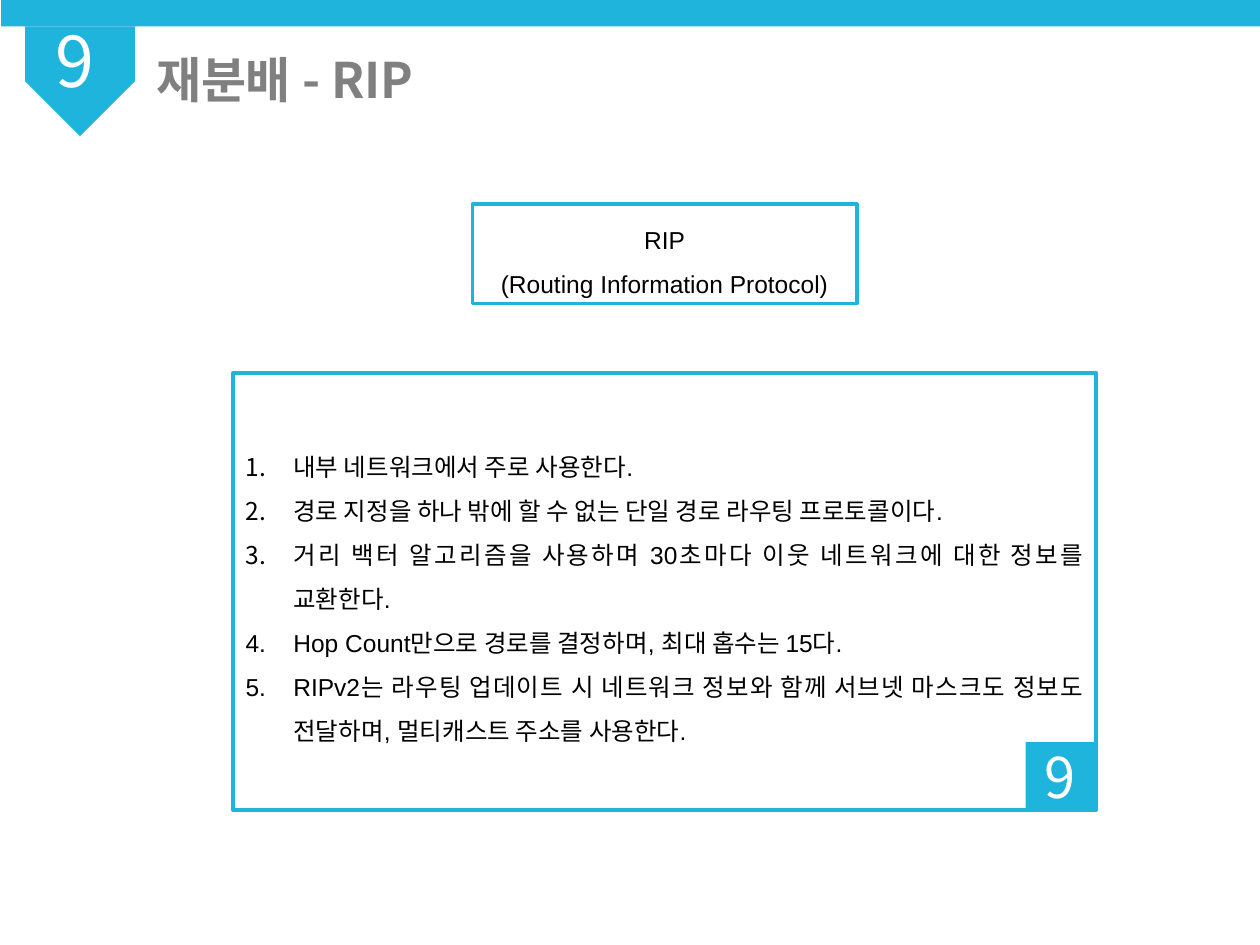
from lxml import etree
from pptx import Presentation
from pptx.dml.color import RGBColor
from pptx.enum.shapes import MSO_SHAPE
from pptx.enum.text import MSO_ANCHOR, PP_ALIGN
from pptx.oxml.ns import qn
from pptx.util import Inches, Pt

RECT = MSO_SHAPE.RECTANGLE
SNIP = MSO_SHAPE.SNIP_2_SAME_RECTANGLE
TOP, MIDDLE = MSO_ANCHOR.TOP, MSO_ANCHOR.MIDDLE
LEFT, CENTER, JUSTIFY = PP_ALIGN.LEFT, PP_ALIGN.CENTER, PP_ALIGN.JUSTIFY

THEME = {
    "blue": RGBColor.from_string("1EB4DC"),
    "gray": RGBColor.from_string("808080"),
    "black": RGBColor.from_string("000000"),
    "white": RGBColor.from_string("FFFFFF"),
    "latin": "Arial",
    "hangul": "Noto Sans CJK KR",
    "body": Pt(14),
    "title": Pt(28),
    "page": Pt(32),
    "badge": Pt(40),
}

deck = Presentation()
deck.slide_width, deck.slide_height = Inches(10), Inches(7.5)
slide = deck.slides.add_slide(deck.slide_layouts[6])


def add_box(kind, area, solid):
    box = slide.shapes.add_shape(kind, *map(Inches, area))
    box.shadow.inherit = False
    if solid:
        box.fill.solid()
        box.fill.fore_color.rgb = THEME["blue"]
        box.line.fill.background()
    else:
        box.fill.background()
        box.line.color.rgb = THEME["blue"]
        box.line.width = Pt(2)
    return box


def write(box, lines, size, color, font, align, anchor=MIDDLE,
          space=None, bold=False, number=False):
    frame = box.text_frame
    frame.word_wrap = True
    frame.vertical_anchor = anchor
    for i, line in enumerate(lines):
        para = frame.paragraphs[0] if i == 0 else frame.add_paragraph()
        para.alignment = align
        para.line_spacing = space
        if number:
            props = para._p.get_or_add_pPr()
            props.set("marL", str(Inches(0.38)))
            props.set("indent", str(-Inches(0.38)))
            etree.SubElement(props, qn("a:buAutoNum"), type="arabicPeriod")
        run = para.add_run()
        run.text = line
        run.font.size = THEME[size]
        run.font.color.rgb = THEME[color]
        run.font.bold = bold
        run.font.name = THEME[font]
        etree.SubElement(run._r.get_or_add_rPr(), qn("a:ea"),
                         typeface=THEME["hangul"])


facts = [
    "내부 네트워크에서 주로 사용한다.",
    "경로 지정을 하나 밖에 할 수 없는 단일 경로 라우팅 프로토콜이다.",
    "거리 백터 알고리즘을 사용하며 30초마다 이웃 네트워크에 대한 정보를 교환한다.",
    "Hop Count만으로 경로를 결정하며, 최대 홉수는 15다.",
    "RIPv2는 라우팅 업데이트 시 네트워크 정보와 함께 서브넷 마스크도 정보도 "
    "전달하며, 멀티캐스트 주소를 사용한다.",
]
panel = add_box(RECT, (1.85, 2.96, 6.85, 3.47), False)
write(panel, facts, "body", "black", "latin", JUSTIFY, space=1.5, number=True)

title = slide.shapes.add_textbox(*map(Inches, (1.14, 0.34, 7, 0.74)))
write(title, ["재분배 - RIP"], "title", "gray", "hangul", LEFT, TOP, bold=True)

add_box(RECT, (0.01, 0, 10, 0.21), True)
flag = add_box(SNIP, (0.2, 0.21, 0.87, 0.87), True)
flag.rotation = 180
flag.adjustments[0] = 0.5
flag.adjustments[1] = 0

badge = slide.shapes.add_textbox(*map(Inches, (0.34, 0.09, 0.68, 0.77)))
write(badge, ["9"], "badge", "white", "hangul", LEFT, TOP)

page = add_box(RECT, (8.14, 5.89, 0.55, 0.54), True)
write(page, ["9"], "page", "white", "hangul", CENTER)

name = add_box(RECT, (3.75, 1.62, 3.05, 0.79), False)
write(name, ["RIP", "(Routing Information Protocol)"],
      "body", "black", "latin", CENTER, space=1.5)

deck.save("out.pptx")
